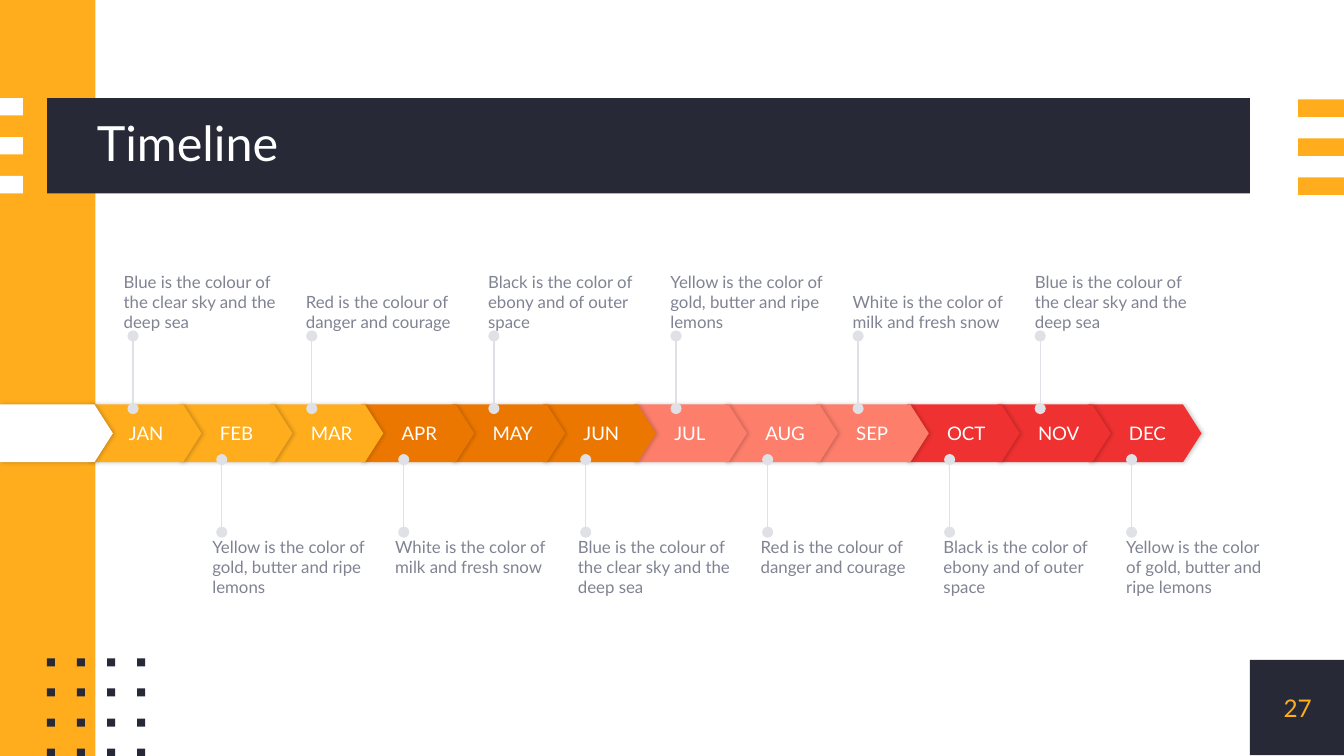
from pptx import Presentation
from pptx.dml.color import RGBColor
from pptx.enum import shapes, text
from pptx.oxml import parse_xml
from pptx.oxml.ns import nsdecls
from pptx.util import Inches, Pt

COLORS = {
    "navy": "272A36", "yellow": "FFAD1D", "orange": "EB7700", "coral": "FD7E6B",
    "red": "F03131", "white": "FFFFFF", "grey": "808392", "stem": "E0E0E7",
}
FONT = "Lato"
WIDTH = 10
HEIGHT = WIDTH * 9 / 16
QUARTERS = [
    ("yellow", ["JAN", "FEB", "MAR"]),
    ("orange", ["APR", "MAY", "JUN"]),
    ("coral", ["JUL", "AUG", "SEP"]),
    ("red", ["OCT", "NOV", "DEC"]),
]
BLUE = "Blue is the colour of the clear sky and the deep sea"
RED = "Red is the colour of danger and courage"
BLACK = "Black is the color of ebony and of outer space"
YELLOW = "Yellow is the color of gold, butter and ripe lemons"
WHITE = "White is the color of milk and fresh snow"
SHADOW = (
    f'<a:effectLst {nsdecls("a")}><a:outerShdw blurRad="{Pt(2.2)}" dist="{Pt(0.8)}" dir="0">'
    '<a:srgbClr val="000000"><a:alpha val="20000"/></a:srgbClr></a:outerShdw></a:effectLst>'
)


def rgb(name):
    return RGBColor.from_string(COLORS[name])


def spread(first, last, count):
    """Evenly spaced positions from first to last."""
    return [first + (last - first) * i / (count - 1) for i in range(count)]


def add_block(s, x, y, w, h, color, kind=shapes.MSO_SHAPE.RECTANGLE):
    sp = s.shapes.add_shape(kind, Inches(x), Inches(y), Inches(w), Inches(h))
    sp.shadow.inherit = False
    sp.fill.solid()
    sp.fill.fore_color.rgb = rgb(color)
    sp.line.fill.background()
    return sp


def write(sp, words, size, color, anchor=text.MSO_ANCHOR.MIDDLE,
          align=text.PP_ALIGN.LEFT, inset=0):
    tf = sp.text_frame
    tf.text = words
    tf.word_wrap = True
    tf.auto_size = text.MSO_AUTO_SIZE.NONE
    tf.vertical_anchor = anchor
    tf.margin_left = Inches(inset)
    tf.margin_top = tf.margin_right = tf.margin_bottom = 0
    p = tf.paragraphs[0]
    p.alignment = align
    font = p.runs[0].font
    font.name, font.size = FONT, Pt(size)
    font.color.rgb = rgb(color)
    return p


def add_label(s, x, y, w, h, words, size, color, **options):
    box = s.shapes.add_textbox(Inches(x), Inches(y), Inches(w), Inches(h))
    write(box, words, size, color, **options)


def add_stripes(s, x, y, w, color):
    for i in range(3):
        add_block(s, x, y + 0.29 * i, w, 0.13, color)


def add_dots(s, x, y, span):
    for top in spread(y, y + span, 4):
        for left in spread(x, x + span, 4):
            add_block(s, left, top, 0.06, 0.06, "navy")


def add_title_band(s, x, y, w, h, words):
    add_block(s, x, y, w, h, "navy")
    title = s.shapes.title
    title.left, title.top = Inches(x + 0.37), Inches(y)
    title.width, title.height = Inches(w - 0.37), Inches(h)
    write(title, words, 26, "white").line_spacing = 0.9
    # Bring the title in front of its band
    title.element.getparent().append(title.element)


def add_page_number(s, x, y, side, number):
    add_block(s, x, y, side, side, "navy")
    add_label(s, x, y, side, side, number, 13, "yellow", align=text.PP_ALIGN.CENTER)


def add_month_arrows(s, x, y, last_x):
    """Overlapping arrows, drawn right to left so each covers the next one's start."""
    months = [(color, m) for color, names in QUARTERS for m in names]
    lefts = [x] + spread(x + 0.66, last_x, len(months))
    arrows = list(zip(lefts, [("white", "")] + months))
    for left, (color, month) in reversed(arrows):
        arrow = add_block(s, left, y, 0.84, 0.43, color, shapes.MSO_SHAPE.PENTAGON)
        arrow.adjustments[0] = 0.32
        pr = arrow.element.spPr
        pr.replace(pr.effectLst, parse_xml(SHADOW))
        if month:
            write(arrow, month, 10, "white", inset=0.3)


def add_stem(s, x, y1, y2):
    stem = s.shapes.add_connector(
        shapes.MSO_CONNECTOR.STRAIGHT, Inches(x), Inches(y1), Inches(x), Inches(y2))
    stem.line.color.rgb = rgb("stem")
    stem.line.width = Pt(0.75)
    pr = stem.element.spPr
    for end in ("headEnd", "tailEnd"):
        pr.get_or_add_ln().append(parse_xml(f'<a:{end} {nsdecls("a")} type="oval"/>'))
    pr.append(parse_xml(f'<a:effectLst {nsdecls("a")}/>'))


def add_notes_row(s, notes, stem_xs, stem_y, note_xs, y, anchor, last_width=1.28):
    widths = [1.28] * (len(notes) - 1) + [last_width]
    for note, stem_x, x, width in zip(notes, stem_xs, note_xs, widths):
        add_stem(s, stem_x, stem_y + 0.54, stem_y)
        add_label(s, x, y, width, 0.58, note, 9, "grey", anchor=anchor)


def build_timeline_slide(prs):
    s = prs.slides.add_slide(prs.slide_layouts[5])
    add_block(s, 0, 0, 0.71, HEIGHT, "yellow")
    add_title_band(s, 0.35, 0.73, 8.95, 0.71, "Timeline")
    add_stripes(s, 0, 0.73, 0.17, "white")
    add_stripes(s, 9.66, 0.74, 0.34, "yellow")
    add_dots(s, 0.35, 4.9, 0.67)
    add_page_number(s, 9.3, 4.91, 0.71, "27")

    add_month_arrows(s, 0, 3.01, 8.1)
    add_notes_row(s, [BLUE, RED, BLACK, YELLOW, WHITE, BLUE],
                  [0.99] + spread(2.32, 7.74, 5), 2.5,
                  spread(0.92, 7.7, 6), 1.89, text.MSO_ANCHOR.BOTTOM)
    add_notes_row(s, [YELLOW, WHITE, BLUE, RED, BLACK, YELLOW],
                  spread(1.65, 8.42, 6), 3.42,
                  spread(1.58, 8.38, 6), 3.99, text.MSO_ANCHOR.TOP, last_width=1.06)


def main():
    prs = Presentation()
    prs.slide_width, prs.slide_height = Inches(WIDTH), Inches(HEIGHT)
    build_timeline_slide(prs)
    prs.save("out.pptx")


if __name__ == "__main__":
    main()
